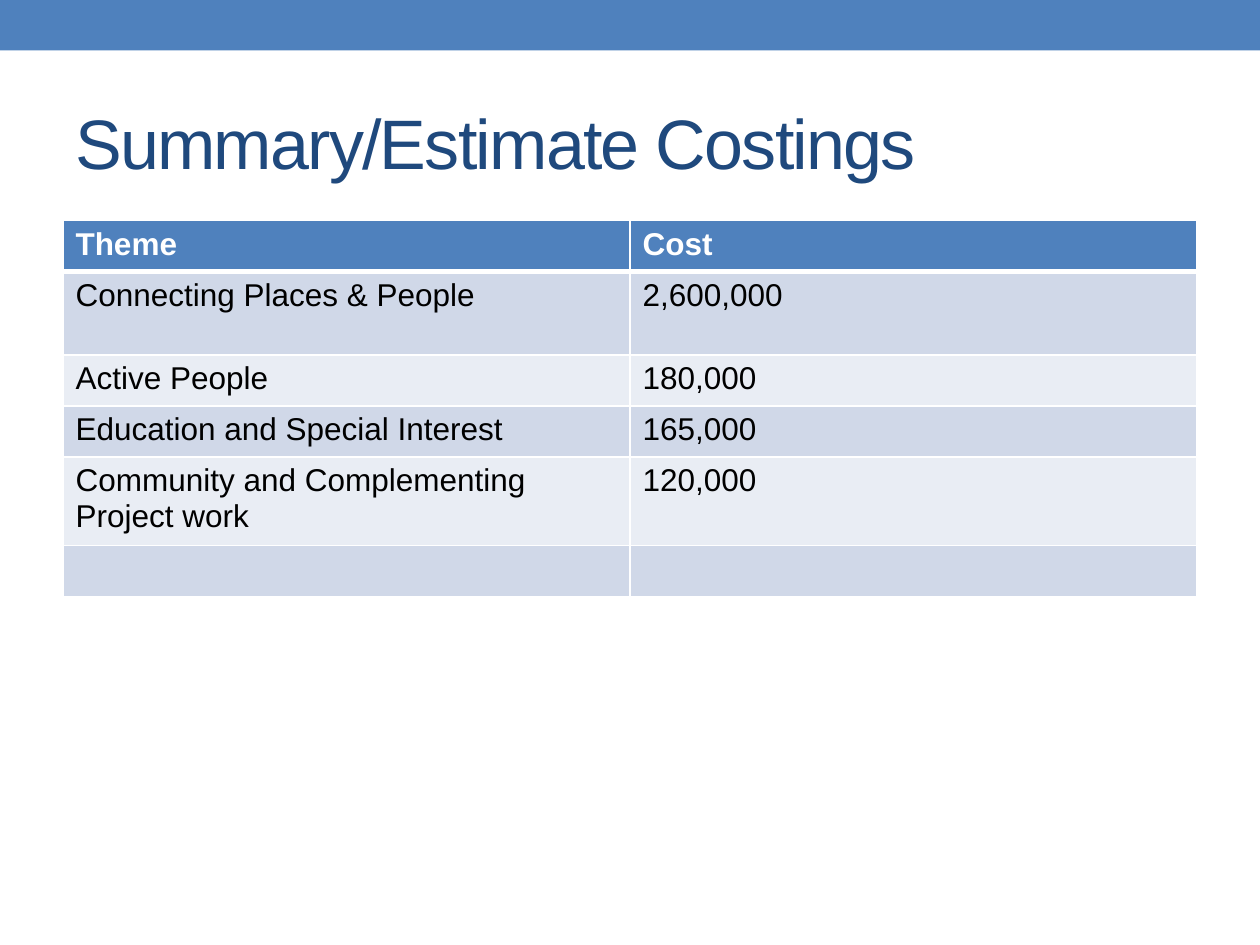
from lxml import etree
from pptx import Presentation
from pptx.dml.color import RGBColor
from pptx.enum.shapes import MSO_SHAPE
from pptx.enum.text import MSO_ANCHOR
from pptx.oxml.ns import qn
from pptx.util import Pt

RECTANGLE = MSO_SHAPE.RECTANGLE
MIDDLE = MSO_ANCHOR.MIDDLE

BLUE = RGBColor(0x4F, 0x81, 0xBD)
NAVY = RGBColor(0x1F, 0x49, 0x7D)
BAND_DARK = RGBColor(0xD0, 0xD8, 0xE8)
BAND_LIGHT = RGBColor(0xE9, 0xED, 0xF4)
WHITE = RGBColor(0xFF, 0xFF, 0xFF)
BLACK = RGBColor(0, 0, 0)
FONT = "Arial"

# Content
TITLE = "Summary/Estimate Costings"
ROWS = [
    ("Theme", "Cost"),
    ("Connecting Places & People", "2,600,000"),
    ("Active People", "180,000"),
    ("Education and Special Interest", "165,000"),
    ("Community and Complementing Project work", "120,000"),
    ("", ""),
]
SINGLE, DOUBLE = 29.2, 47.6
ROW_HEIGHTS = [SINGLE, DOUBLE, SINGLE, SINGLE, DOUBLE, SINGLE]
COLUMN_WIDTH = 324


def set_font(font, size, color, bold=False):
    font.name = FONT
    font.size = Pt(size)
    font.bold = bold
    font.color.rgb = color


def set_border(cell, side, width):
    line = etree.SubElement(cell._tc.get_or_add_tcPr(), qn(f"a:{side}"), w=str(Pt(width)))
    fill = etree.SubElement(line, qn("a:solidFill"))
    etree.SubElement(fill, qn("a:srgbClr"), val=str(WHITE))


def add_header(page):
    # Top band
    band = page.shapes.add_shape(RECTANGLE, 0, 0, Pt(720), Pt(28.8))
    band.shadow.inherit = False
    band.fill.solid()
    band.fill.fore_color.rgb = BLUE
    band.line.fill.background()

    # Title, with tightened letter spacing
    box = page.shapes.add_textbox(Pt(36), Pt(41.76), Pt(648), Pt(77.76))
    frame = box.text_frame
    frame.word_wrap = True
    frame.vertical_anchor = MIDDLE
    para = frame.paragraphs[0]
    set_font(para.font, 40, NAVY)
    span = para.add_run()
    span.text = TITLE
    span._r.get_or_add_rPr().set("spc", "-100")


def add_costs(page):
    columns = len(ROWS[0])
    table = page.shapes.add_table(
        len(ROWS), columns, Pt(36), Pt(126),
        Pt(COLUMN_WIDTH * columns), Pt(sum(ROW_HEIGHTS))).table
    for column in table.columns:
        column.width = Pt(COLUMN_WIDTH)

    for r, (texts, height) in enumerate(zip(ROWS, ROW_HEIGHTS)):
        table.rows[r].height = Pt(height)
        header = r == 0
        fill = BLUE if header else (BAND_LIGHT, BAND_DARK)[r % 2]
        for c, text in enumerate(texts):
            cell = table.cell(r, c)
            cell.text = text
            set_font(cell.text_frame.paragraphs[0].font, 18,
                     WHITE if header else BLACK, header)
            # A thick rule parts the header from the body
            widths = {"lnL": 1, "lnR": 1, "lnT": 3 if r == 1 else 1,
                      "lnB": 3 if header else 1}
            for side, width in widths.items():
                set_border(cell, side, width)
            cell.fill.solid()
            cell.fill.fore_color.rgb = fill


def main():
    deck = Presentation()
    deck.slide_width, deck.slide_height = Pt(720), Pt(540)
    page = deck.slides.add_slide(deck.slide_layouts[6])
    add_header(page)
    add_costs(page)
    deck.save("out.pptx")


if __name__ == "__main__":
    main()
